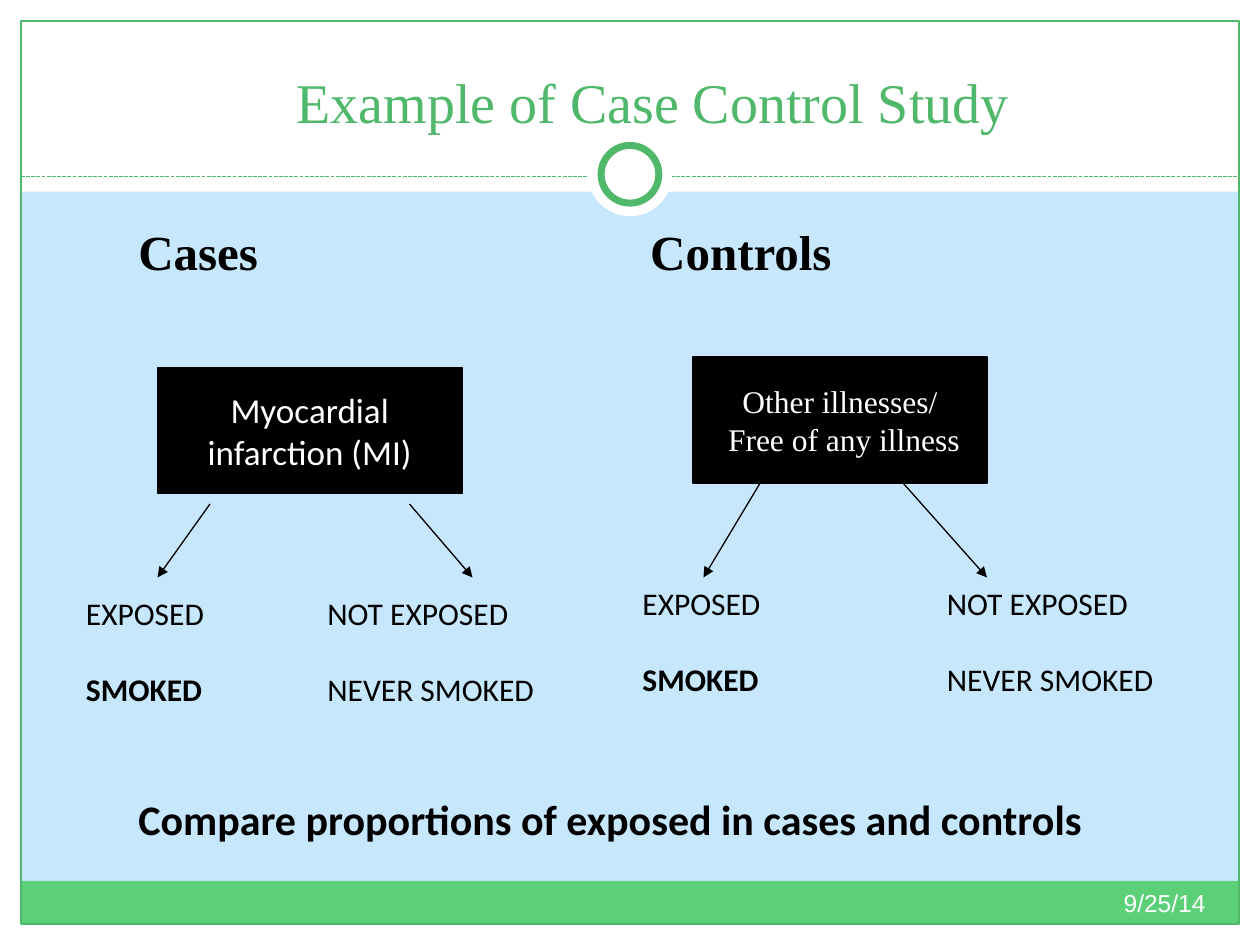
import pptx
import pptx.util
import pptx.dml.color
import pptx.enum.dml
import pptx.enum.shapes
import pptx.enum.text
import pptx.oxml.ns
import lxml.etree
from typing import NamedTuple, Optional

COLORS = {"sky": "C6E7FC", "white": "FFFFFF", "leaf": "50B86A", "mint": "5BD078", "black": "000000"}
COLUMNS, ROWS = 120, 90
MARGIN = 2
LINE_GAP = 22
ALIGN = pptx.enum.text.PP_ALIGN
ANCHOR = pptx.enum.text.MSO_ANCHOR
SHAPE = pptx.enum.shapes.MSO_SHAPE

deck = pptx.Presentation()
deck.slide_width = pptx.util.Inches(10)
deck.slide_height = pptx.util.Inches(7.5)


class Area(NamedTuple):
    column: float
    row: float
    columns: float
    rows: float


class Style(NamedTuple):
    font: str
    size: float
    color: str = "black"
    bold: bool = False
    align: ALIGN = ALIGN.LEFT


class Panel(NamedTuple):
    area: Area
    fill: Optional[str]
    line: Optional[str] = None
    width: float = 0.75
    kind: SHAPE = SHAPE.RECTANGLE


class Label(NamedTuple):
    text: str
    area: Area
    style: Style


class Exposure(NamedTuple):
    column: float
    row: float
    status: str
    habit: str
    bold: bool


class Arrow(NamedTuple):
    start: tuple[float, float]
    end: tuple[float, float]


def across(columns: float) -> int:
    return round(deck.slide_width * columns / COLUMNS)


def down(rows: float) -> int:
    return round(deck.slide_height * rows / ROWS)


def place(area: Area) -> tuple[int, int, int, int]:
    return across(area.column), down(area.row), across(area.columns), down(area.rows)


def color(name: str) -> pptx.dml.color.RGBColor:
    return pptx.dml.color.RGBColor.from_string(COLORS[name])


def write(box, text: str, style: Style, anchor: ANCHOR = ANCHOR.TOP) -> None:
    frame = box.text_frame
    frame.text = text
    frame.word_wrap = True
    frame.vertical_anchor = anchor
    for para in frame.paragraphs:
        para.alignment = style.align
        for span in para.runs:
            span.font.name = style.font
            span.font.size = pptx.util.Pt(style.size)
            span.font.bold = style.bold
            span.font.color.rgb = color(style.color)


def add_panel(page, panel: Panel):
    box = page.shapes.add_shape(panel.kind, *place(panel.area))
    box.shadow.inherit = False
    if panel.fill:
        box.fill.solid()
        box.fill.fore_color.rgb = color(panel.fill)
    else:
        box.fill.background()
    if panel.line:
        box.line.color.rgb = color(panel.line)
        box.line.width = pptx.util.Pt(panel.width)
    else:
        box.line.fill.background()
    return box


def add_label(page, label: Label):
    box = page.shapes.add_textbox(*place(label.area))
    write(box, label.text, label.style)
    return box


def add_exposure(page, group: Exposure) -> None:
    area = Area(group.column, group.row, 26, 12)
    box = add_label(page, Label(f"{group.status}\n{group.habit}", area, Style("Calibri", 18)))
    habit = box.text_frame.paragraphs[1]
    habit.space_before = pptx.util.Pt(LINE_GAP)
    habit.runs[0].font.bold = group.bold


def add_line(page, arrow: Arrow, name: str):
    (left, top), (right, bottom) = arrow
    line = page.shapes.add_connector(
        pptx.enum.shapes.MSO_CONNECTOR.STRAIGHT, across(left), down(top), across(right), down(bottom))
    line.line.color.rgb = color(name)
    line.line.width = pptx.util.Pt(0.75)
    lxml.etree.SubElement(line.element.spPr, pptx.oxml.ns.qn("a:effectLst"))
    return line


def add_arrow(page, arrow: Arrow) -> None:
    line = add_line(page, arrow, "black")
    outline = line.element.spPr.find(pptx.oxml.ns.qn("a:ln"))
    lxml.etree.SubElement(outline, pptx.oxml.ns.qn("a:tailEnd"), type="triangle")


INNER_COLUMNS, INNER_ROWS = COLUMNS - 2 * MARGIN, ROWS - 2 * MARGIN
BORDERS = [
    Panel(Area(0, ROWS - MARGIN, COLUMNS, MARGIN), "white"),
    Panel(Area(0, 0, COLUMNS, 18.25), "white"),
    Panel(Area(0, 0, MARGIN, ROWS), "white"),
    Panel(Area(COLUMNS - MARGIN, 0, MARGIN, ROWS), "white"),
    Panel(Area(MARGIN, 83.9, INNER_COLUMNS, 4.1), "mint"),
    Panel(Area(MARGIN, MARGIN, INNER_COLUMNS, INNER_ROWS), None, "leaf"),
]
RINGS = [
    Panel(Area(56, 12.6, 8, 8), "white", kind=SHAPE.OVAL),
    Panel(Area(57.25, 13.85, 5.5, 5.5), "white", "leaf", 4, SHAPE.OVAL),
]
HEADING = Style("Times New Roman", 28, bold=True)
LABELS = [
    Label("Cases", Area(12, 20.5, 30, 6), HEADING),
    Label("Controls", Area(60.75, 20.5, 30, 6), HEADING),
    Label("9/25/14", Area(76, 84, 40, 4.8), Style("Arial", 14, "white", align=ALIGN.RIGHT)),
    Label("Compare proportions of exposed in cases and controls", Area(12, 75, 97, 6),
          Style("Calibri", 24, bold=True)),
]
GROUPS = [
    Label("Myocardial\ninfarction (MI)", Area(15, 35, 29, 12),
          Style("Calibri", 20, "white", align=ALIGN.CENTER)),
    Label("Other illnesses/\n Free of any illness", Area(66, 34, 28, 12),
          Style("Times New Roman", 18, "white", align=ALIGN.CENTER)),
]
ARROWS = [
    Arrow((20, 48), (15, 55)),
    Arrow((39, 48), (45, 55)),
    Arrow((73, 45), (67, 55)),
    Arrow((86, 46), (94, 55)),
]
EXPOSURES = [
    Exposure(column, row, status, habit, bold)
    for row, columns in ((56, (7, 30)), (55, (60, 89)))
    for column, (status, habit, bold) in zip(
        columns, (("EXPOSED", "SMOKED", True), ("NOT EXPOSED", "NEVER SMOKED", False)))
]


def main() -> None:
    page = deck.slides.add_slide(deck.slide_layouts[5])
    page.background.fill.solid()
    page.background.fill.fore_color.rgb = color("sky")
    for panel in BORDERS:
        add_panel(page, panel)
    divider = add_line(page, Arrow((MARGIN, 16.8), (COLUMNS - MARGIN, 16.8)), "leaf")
    divider.line.dash_style = pptx.enum.dml.MSO_LINE.SQUARE_DOT
    for ring in RINGS:
        add_panel(page, ring)

    title = page.shapes.title
    title.left, title.top, title.width, title.height = place(Area(8.2, -1.6, 108, 15))
    write(title, "Example of Case Control Study",
          Style("Times New Roman", 32, "leaf", align=ALIGN.CENTER), ANCHOR.BOTTOM)
    title.element.getparent().append(title.element)

    for label in LABELS:
        add_label(page, label)
    for group in GROUPS:
        box = add_panel(page, Panel(group.area, "black", "black"))
        write(box, group.text, group.style, ANCHOR.MIDDLE)
    for arrow in ARROWS:
        add_arrow(page, arrow)
    for exposure in EXPOSURES:
        add_exposure(page, exposure)
    deck.save("out.pptx")


if __name__ == "__main__":
    main()
